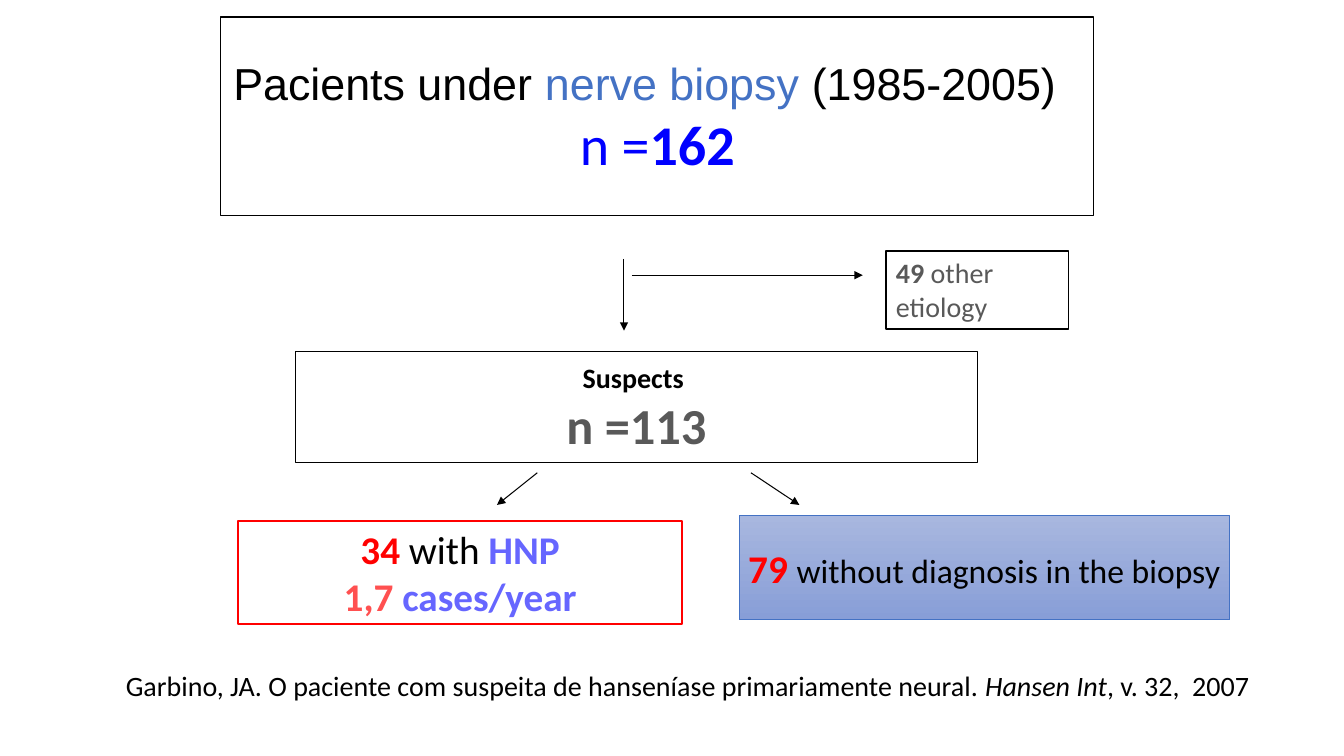
from dataclasses import dataclass

from lxml import etree
from pptx import Presentation
from pptx.dml.color import RGBColor
from pptx.enum.shapes import MSO_CONNECTOR, MSO_SHAPE
from pptx.enum.text import MSO_ANCHOR, MSO_AUTO_SIZE, PP_ALIGN
from pptx.oxml.ns import qn
from pptx.util import Pt

RECTANGLE = MSO_SHAPE.RECTANGLE
STRAIGHT = MSO_CONNECTOR.STRAIGHT
CENTER, LEFT = PP_ALIGN.CENTER, PP_ALIGN.LEFT
MIDDLE, TOP = MSO_ANCHOR.MIDDLE, MSO_ANCHOR.TOP
FIXED, GROW = MSO_AUTO_SIZE.NONE, MSO_AUTO_SIZE.SHAPE_TO_FIT_TEXT
TITLE_ONLY = 5


@dataclass(frozen=True)
class Theme:
    heading_font: str = "Arial"
    body_font: str = "Calibri"
    black: str = "000000"
    white: str = "FFFFFF"
    gray: str = "595959"
    red: str = "FF0000"
    coral: str = "FF5050"
    blue: str = "0000FF"
    accent: str = "4472C4"
    violet: str = "6666FF"
    gradient: tuple = ("A8B7DF", "889ED7")
    small: int = 20
    medium: int = 24
    large: int = 28
    heading: int = 32
    count: int = 36
    total: int = 40


THEME = Theme()


def rgb(color):
    return RGBColor.from_string(color)


def add_run(paragraph, text, size=THEME.small, color=THEME.black,
            font=THEME.body_font, bold=False, italic=False):
    run = paragraph.add_run()
    run.text = text
    run.font.size = Pt(size)
    run.font.name = font
    run.font.bold = bold
    run.font.italic = italic
    run.font.color.rgb = rgb(color)


class FlowSlide:
    """Holds the theme and the slide being drawn; all lengths are in points."""

    def __init__(self, slide, theme):
        self.slide = slide
        self.theme = theme

    def fill_text(self, shape, lines, align=CENTER, anchor=MIDDLE,
                  wrap=False, auto_size=FIXED):
        """Each line is a list of (text, format) pairs."""
        frame = shape.text_frame
        frame.word_wrap = wrap
        frame.auto_size = auto_size
        frame.vertical_anchor = anchor
        for index, line in enumerate(lines):
            paragraph = frame.add_paragraph() if index else frame.paragraphs[0]
            paragraph.alignment = align
            paragraph.line_spacing = 1.0
            paragraph.space_before = Pt(0)
            for text, style in line:
                add_run(paragraph, text, **style)

    def outline(self, shape, fill, color, width):
        if isinstance(fill, tuple):
            shape.fill.gradient()
            shape.fill.gradient_angle = 270
            for stop, stop_color in zip(shape.fill.gradient_stops, fill):
                stop.color.rgb = rgb(stop_color)
        else:
            shape.fill.solid()
            shape.fill.fore_color.rgb = rgb(fill)
        shape.line.color.rgb = rgb(color)
        shape.line.width = Pt(width)

    def title(self, left, top, width, height, lines):
        shape = self.slide.shapes.title
        shape.left, shape.top = Pt(left), Pt(top)
        shape.width, shape.height = Pt(width), Pt(height)
        self.outline(shape, self.theme.white, self.theme.black, 1)
        self.fill_text(shape, lines)

    def box(self, left, top, width, height, lines, fill=THEME.white,
            line=THEME.black, line_width=1, **layout):
        shape = self.slide.shapes.add_shape(
            RECTANGLE, Pt(left), Pt(top), Pt(width), Pt(height))
        shape.shadow.inherit = False
        self.outline(shape, fill, line, line_width)
        self.fill_text(shape, lines, **layout)

    def label(self, left, top, width, height, lines, **layout):
        shape = self.slide.shapes.add_textbox(
            Pt(left), Pt(top), Pt(width), Pt(height))
        self.fill_text(shape, lines, **layout)

    def arrow(self, start_x, start_y, end_x, end_y):
        connector = self.slide.shapes.add_connector(
            STRAIGHT, Pt(start_x), Pt(start_y), Pt(end_x), Pt(end_y))
        connector.line.color.rgb = rgb(self.theme.black)
        connector.line.width = Pt(0.75)
        properties = connector._element.spPr
        etree.SubElement(properties.find(qn("a:ln")), qn("a:tailEnd"), type="triangle")
        etree.SubElement(properties, qn("a:effectLst"))


def main():
    presentation = Presentation()
    presentation.slide_width, presentation.slide_height = Pt(960), Pt(540)
    slide = presentation.slides.add_slide(presentation.slide_layouts[TITLE_ONLY])
    flow = FlowSlide(slide, THEME)

    # All patients
    heading = dict(size=THEME.heading, font=THEME.heading_font)
    total = dict(size=THEME.total, color=THEME.blue)
    flow.title(157.7, 12.2, 623.5, 141.8, [
        [("Pacients under ", heading),
         ("nerve biopsy ", dict(heading, color=THEME.accent)),
         ("(1985-2005)  ", heading)],
        [("n =", total), ("162", dict(total, bold=True))],
    ])

    # Suspected cases
    flow.box(211, 251.3, 487.4, 79.2, [
        [("Suspects ", dict(bold=True))],
        [("n =113", dict(size=THEME.count, color=THEME.gray, bold=True))],
    ])

    # Cases with HNP
    strong = dict(size=THEME.large, bold=True)
    flow.box(169.9, 372.2, 317.5, 73.4, [
        [("34 ", dict(strong, color=THEME.red)),
         ("with ", dict(size=THEME.large)),
         ("HNP", dict(strong, color=THEME.violet))],
        [("1,7", dict(strong, color=THEME.coral)),
         (" cases/year", dict(strong, color=THEME.violet))],
    ], line=THEME.red, line_width=1.5)

    # Cases without diagnosis
    flow.box(527.8, 367.9, 350.6, 74.9, [
        [("79 ", dict(strong, color=THEME.red)),
         ("without diagnosis in the biopsy", dict(size=THEME.medium))],
    ], fill=THEME.gradient, line=THEME.accent, line_width=0.5)

    # Excluded cases
    flow.box(632.9, 179.3, 130.3, 55.7, [
        [("49 ", dict(color=THEME.gray, bold=True)),
         ("other etiology", dict(color=THEME.gray))],
    ], align=LEFT, anchor=TOP, wrap=True, auto_size=GROW)

    # Flow arrows
    for ends in ((445.7, 185, 445.7, 236.2), (451.4, 196.6, 616.3, 196.6),
                 (383.8, 337.7, 355, 360.7), (536.4, 337.7, 571, 360.7)):
        flow.arrow(*ends)

    # Reference
    flow.label(82.8, 473.8, 830.2, 31.7, [
        [("Garbino, JA. O paciente com suspeita de hanseníase primariamente neural. ", {}),
         ("Hansen Int", dict(italic=True)),
         (", v. 32,  2007", {})],
    ], align=LEFT, anchor=TOP, wrap=True, auto_size=GROW)

    presentation.save("out.pptx")


if __name__ == "__main__":
    main()
